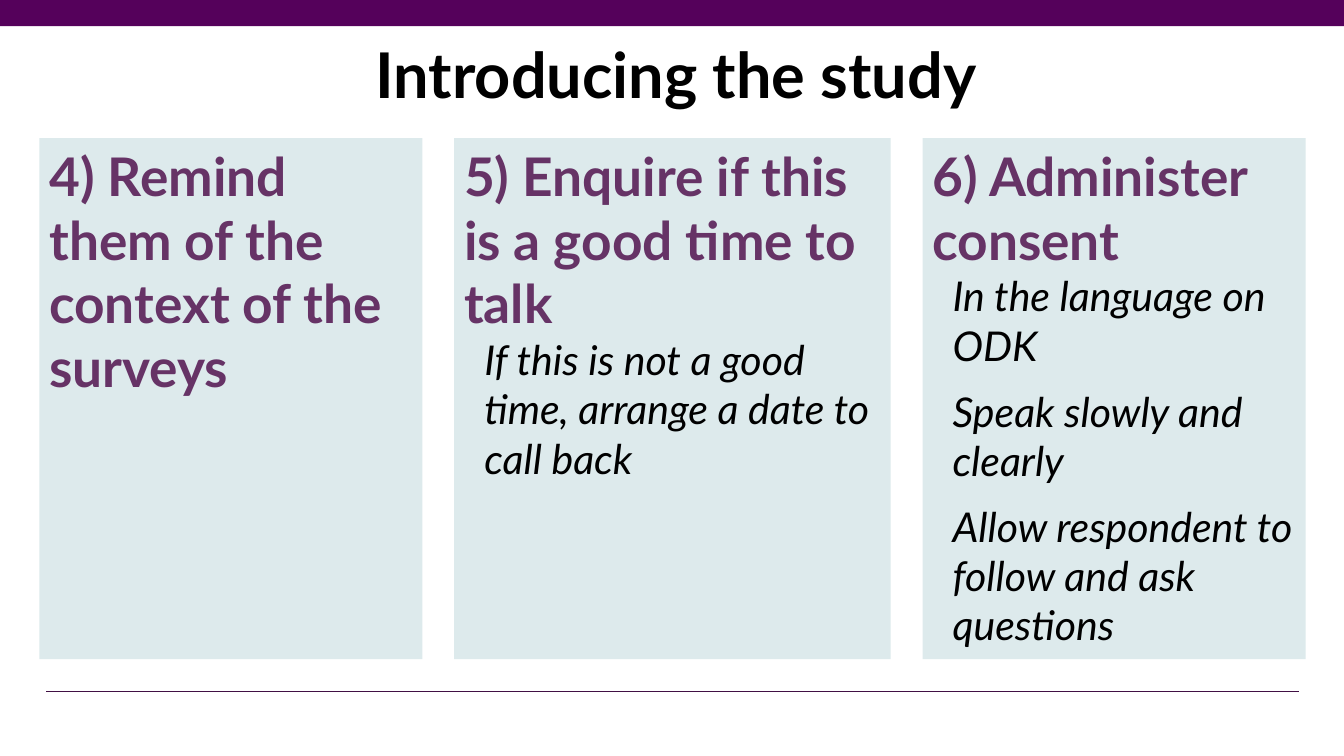
from lxml import etree
from pptx import Presentation
from pptx.dml.color import RGBColor
from pptx.enum.shapes import MSO_CONNECTOR, MSO_SHAPE
from pptx.enum.text import MSO_ANCHOR, MSO_AUTO_SIZE, PP_ALIGN
from pptx.oxml.ns import qn
from pptx.util import Inches, Pt

RECT, LINE = MSO_SHAPE.RECTANGLE, MSO_CONNECTOR.STRAIGHT
TOP, NO_FIT = MSO_ANCHOR.TOP, MSO_AUTO_SIZE.NONE
LEFT, CENTER = PP_ALIGN.LEFT, PP_ALIGN.CENTER
WIDE, HIGH = 13.33, 7.5
FONT = "Lato"
BLACK, PURPLE, BAND, RULE, PANEL = "000000", "663366", "55015B", "411044", "DDEAEC"

STEPS = [
    (3.8, "4) Remind them of the context of the surveys", []),
    (4.33, "5) Enquire if this is a good time to talk",
     ["If this is not a good time, arrange a date to call back"]),
    (3.8, "6) Administer consent",
     ["In the language on ODK", "Speak slowly and clearly",
      "Allow respondent to follow and ask questions"]),
]


def color(code):
    return RGBColor.from_string(code)


def write(para, text, size, ink=BLACK, bold=False, italic=False,
          align=LEFT, before=0, indent=0):
    props = para._p.get_or_add_pPr()
    props.set("marL", str(Inches(indent)))
    props.set("indent", "0")
    para.alignment = align
    para.space_before = Pt(before)
    run = para.add_run()
    run.text = text
    font = run.font
    font.name, font.size, font.bold, font.italic = FONT, Pt(size), bold, italic
    font.color.rgb = color(ink)


def block(slide, box, fill):
    shape = slide.shapes.add_shape(RECT, *map(Inches, box))
    shape.shadow.inherit = False
    shape.fill.solid()
    shape.fill.fore_color.rgb = color(fill)
    shape.line.fill.background()
    return shape


def set_frame(frame):
    frame.word_wrap = True
    frame.auto_size = NO_FIT
    frame.vertical_anchor = TOP


def title(slide, text, box):
    shape = slide.shapes.title
    shape.left, shape.top, shape.width, shape.height = map(Inches, box)
    set_frame(shape.text_frame)
    write(shape.text_frame.paragraphs[0], text, 45, bold=True, align=CENTER)


def panel(slide, box, head, notes):
    frame = block(slide, box, PANEL).text_frame
    set_frame(frame)
    write(frame.paragraphs[0], head, 38, ink=PURPLE, bold=True)
    for i, note in enumerate(notes):
        write(frame.add_paragraph(), note, 29.3, italic=True,
              before=12 if i else 0, indent=0.2)


def columns(slide, box):
    """Spread the steps over the box with equal gaps."""
    left, top, width, height = box
    gap = (width - sum(step[0] for step in STEPS)) / (len(STEPS) - 1)
    for wide, head, notes in STEPS:
        panel(slide, (left, top, wide, height), head, notes)
        left += wide + gap


def rule(slide, left, right, y):
    line = slide.shapes.add_connector(LINE, *map(Inches, (left, y, right, y)))
    line.line.color.rgb = color(RULE)
    line.line.width = Pt(1.25)
    etree.SubElement(line._element.spPr, qn("a:effectLst"))


def main():
    deck = Presentation()
    deck.slide_width, deck.slide_height = Inches(WIDE), Inches(HIGH)
    slide = deck.slides.add_slide(deck.slide_layouts.get_by_name("Title Only"))
    rule(slide, 0.46, 12.88, 6.86)
    title(slide, "Introducing the study", (0.65, 0.3, 12.11, 1.65))
    block(slide, (0, 0, WIDE, 0.26), BAND)
    columns(slide, (0.39, 1.37, 12.56, 5.17))
    deck.save("out.pptx")


if __name__ == "__main__":
    main()
